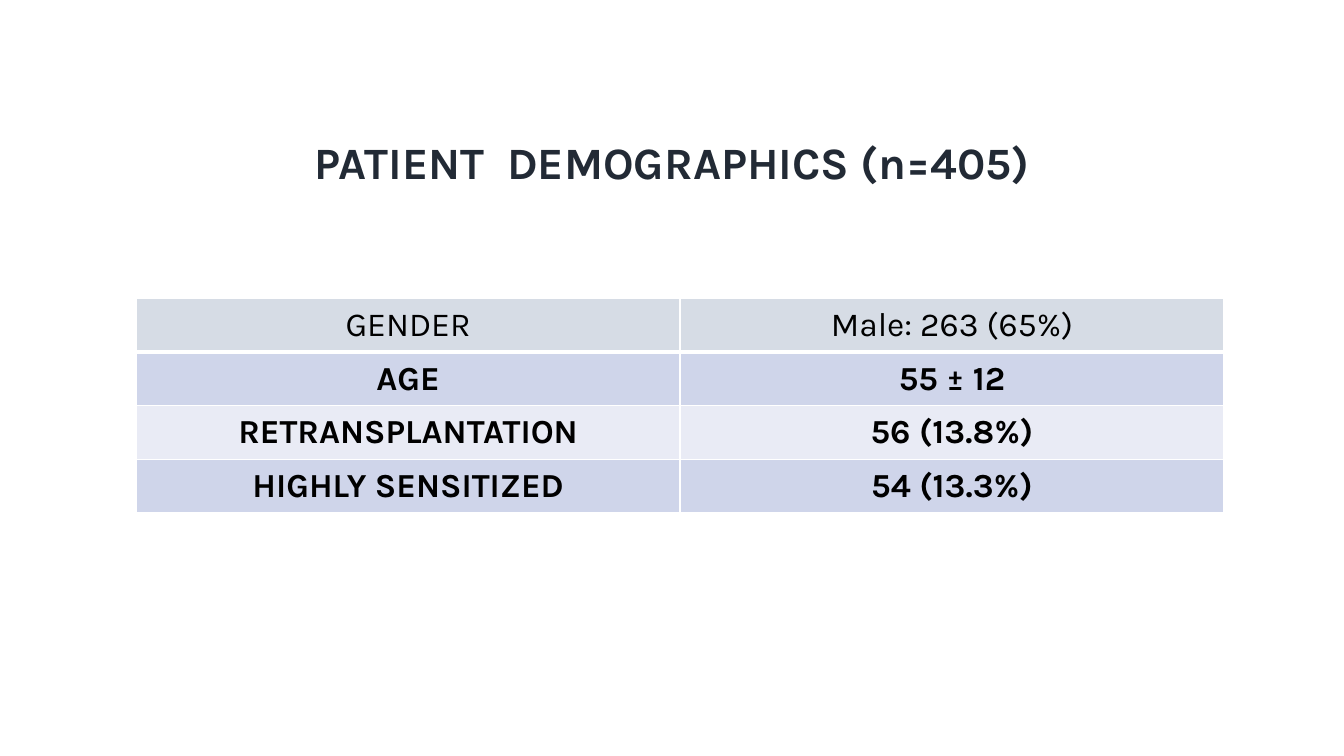
from lxml.etree import SubElement
from pptx import Presentation
from pptx.dml.color import RGBColor
from pptx.enum.text import MSO_ANCHOR, PP_ALIGN
from pptx.oxml.ns import qn
from pptx.util import Inches, Pt

FONT = "Karla"
COLORS = {
    "title": "222A35",
    "text": "000000",
    "border": "FFFFFF",
    "gender": "D6DCE5",
    "band_dark": "CFD5EA",
    "band_light": "E9EBF5",
}
DEMOGRAPHICS = [
    ("GENDER", "Male: 263 (65%)", "gender"),
    ("AGE", "55 ± 12", "band_dark"),
    ("RETRANSPLANTATION", "56 (13.8%)", "band_light"),
    ("HIGHLY SENSITIZED", "54 (13.3%)", "band_dark"),
]


def write_centered(frame, text, size, color, bold):
    """Write one centred run into a text frame."""
    paragraph = frame.paragraphs[0]
    paragraph.alignment = PP_ALIGN.CENTER
    run = paragraph.add_run()
    run.text = text
    run.font.name = FONT
    run.font.size = Pt(size)
    run.font.bold = bold
    run.font.color.rgb = RGBColor.from_string(COLORS[color])
    return paragraph


def add_title(slide, text):
    """Place and format the slide title."""
    title = slide.shapes.title
    title.left, title.top = Inches(0.92), Inches(0.91)
    title.width, title.height = Inches(11.5), Inches(1.45)
    title.text_frame.word_wrap = True
    title.text_frame.vertical_anchor = MSO_ANCHOR.MIDDLE
    heading = write_centered(title.text_frame, text, 32, "title", True)
    heading.line_spacing = 0.9


def set_borders(cell, bottom_width):
    """Draw white borders around a cell."""
    properties = cell._tc.get_or_add_tcPr()
    for side, width in (("L", 1), ("R", 1), ("T", 1), ("B", bottom_width)):
        line = SubElement(properties, qn(f"a:ln{side}"), w=str(Pt(width)))
        fill = SubElement(line, qn("a:solidFill"))
        SubElement(fill, qn("a:srgbClr"), val=COLORS["border"])


def format_cell(cell, text, fill, is_first):
    """Fill one table cell with its text, borders and colour."""
    cell.margin_left = cell.margin_right = Inches(0.13)
    cell.margin_top = cell.margin_bottom = Inches(0.07)
    cell.vertical_anchor = MSO_ANCHOR.MIDDLE
    write_centered(cell.text_frame, text, 24, "text", not is_first)
    set_borders(cell, 3 if is_first else 1)
    cell.fill.solid()
    cell.fill.fore_color.rgb = RGBColor.from_string(COLORS[fill])


def add_demographics_table(slide):
    """Add the two-column table of patient characteristics."""
    table = slide.shapes.add_table(
        len(DEMOGRAPHICS), 2, Inches(1.35), Inches(2.96), Inches(10.79), Inches(2.13)
    ).table
    table.first_row = False
    table.horz_banding = False
    for row, (label, value, fill) in enumerate(DEMOGRAPHICS):
        for column, text in enumerate((label, value)):
            format_cell(table.cell(row, column), text, fill, row == 0)


def main():
    """Build and save the demographics slide."""
    presentation = Presentation()
    presentation.slide_width = Inches(13.33)
    presentation.slide_height = Inches(7.5)
    slide = presentation.slides.add_slide(presentation.slide_layouts[5])
    add_title(slide, "PATIENT  DEMOGRAPHICS (n=405)")
    add_demographics_table(slide)
    presentation.save("out.pptx")


if __name__ == "__main__":
    main()
